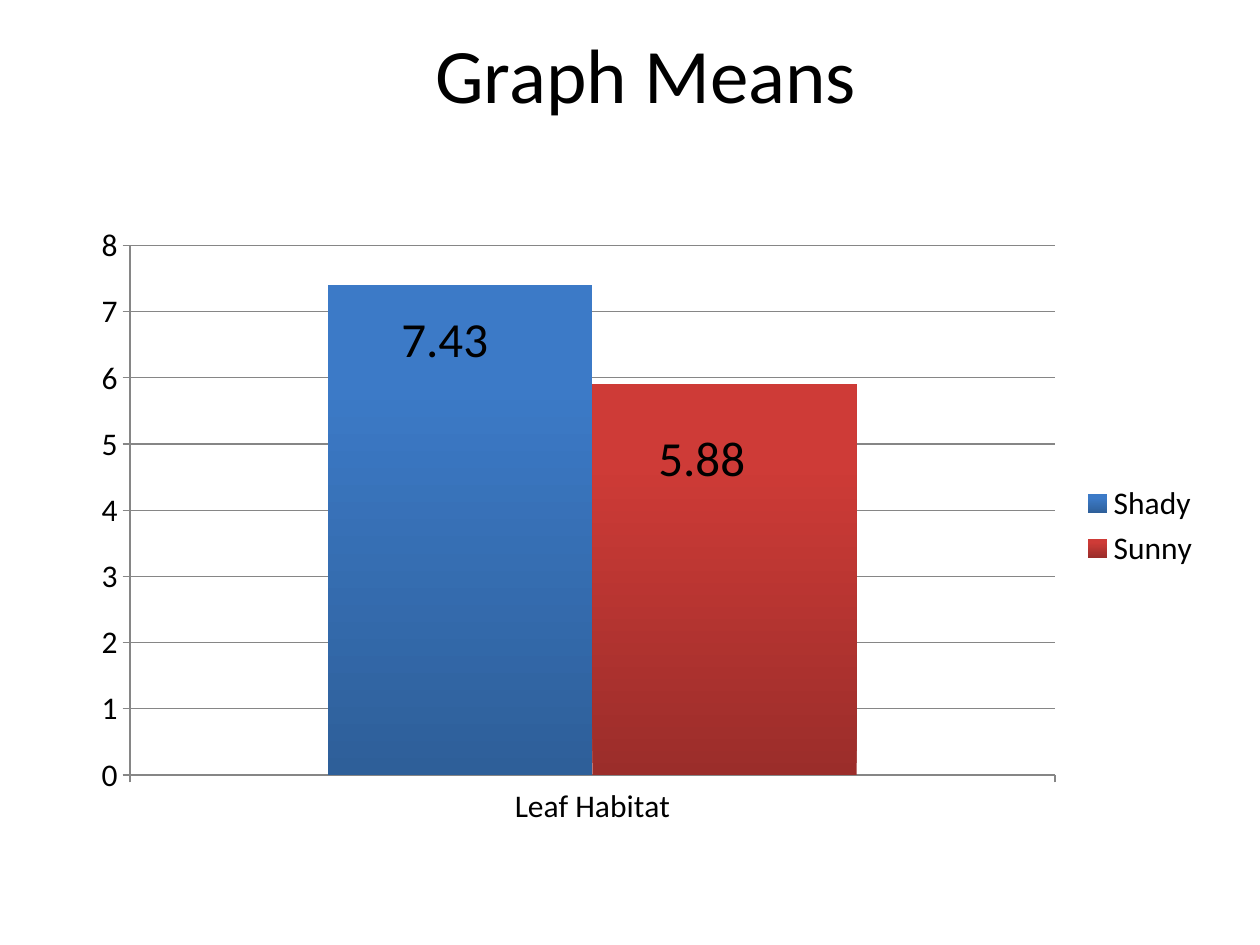
from pptx import Presentation
from pptx.chart.data import CategoryChartData
from pptx.dml.color import RGBColor
from pptx.enum.chart import XL_CHART_TYPE, XL_LEGEND_POSITION, XL_TICK_MARK
from pptx.enum.text import MSO_ANCHOR, PP_ALIGN
from pptx.util import Emu, Pt

COLUMN = XL_CHART_TYPE.COLUMN_CLUSTERED
RIGHT = XL_LEGEND_POSITION.RIGHT
OUTSIDE = XL_TICK_MARK.OUTSIDE
MIDDLE, TOP = MSO_ANCHOR.MIDDLE, MSO_ANCHOR.TOP
CENTER, LEFT = PP_ALIGN.CENTER, PP_ALIGN.LEFT

FONT = "Calibri"
BLACK = "000000"
GREY = "868686"
# name, mean, bottom colour, top colour
HABITATS = [
    ("Shady", 7.4, "2E5F99", "3C7AC7"),
    ("Sunny", 5.9, "9B2D2A", "CE3B37"),
]
# text, offset from the chart's corner
MEAN_LABELS = [("7.43", 310, 88), ("5.88", 567, 207)]


def px(n):
    return Emu(n * 914400 // 126)


def rgb(value):
    return RGBColor.from_string(value)


def style_font(font, size, color=BLACK):
    font.name, font.size = FONT, Pt(size)
    font.color.rgb = rgb(color)


def add_text(slide, text, box, size, align=LEFT, anchor=TOP, wrap=False):
    tf = slide.shapes.add_textbox(*map(px, box)).text_frame
    tf.word_wrap, tf.vertical_anchor = wrap, anchor
    p = tf.paragraphs[0]
    p.alignment = align
    r = p.add_run()
    r.text = text
    style_font(r.font, size)


def style_line(line):
    line.color.rgb = rgb(GREY)
    line.width = Pt(0.75)


def style_axis(axis):
    axis.major_tick_mark = OUTSIDE
    style_line(axis.format.line)


def add_means_chart(slide, box):
    data = CategoryChartData(number_format="General")
    data.categories = ["Leaf Habitat"]
    for name, mean, _, _ in HABITATS:
        data.add_series(name, [mean])
    chart = slide.shapes.add_chart(COLUMN, *map(px, box), data).chart
    style_font(chart.font, 18)
    chart.has_title = False
    chart.has_legend = True
    chart.legend.position = RIGHT
    chart.legend.include_in_layout = False

    style_axis(chart.category_axis)
    values = chart.value_axis
    style_axis(values)
    values.minimum_scale, values.maximum_scale, values.major_unit = 0, 8, 1
    values.has_major_gridlines = True
    style_line(values.major_gridlines.format.line)

    plot = chart.plots[0]
    plot.gap_width, plot.overlap, plot.vary_by_categories = 150, 0, False
    for series, (_, _, bottom, top) in zip(plot.series, HABITATS):
        series.invert_if_negative = False
        fill = series.format.fill
        fill.gradient()
        fill.gradient_angle = 90
        for stop, color, position in zip(fill.gradient_stops, (bottom, top), (0, 0.8)):
            stop.color.rgb = rgb(color)
            stop.position = position


def add_mean_labels(slide, chart_box):
    left, top = chart_box[:2]
    for text, dx, dy in MEAN_LABELS:
        add_text(slide, text, (left + dx, top + dy, 113, 72), 28)


def main():
    prs = Presentation()
    prs.slide_width, prs.slide_height = px(1260), px(945)
    slide = prs.slides.add_slide(prs.slide_layouts[6])
    chart_box = (79, 214, 1134, 624)
    add_text(slide, "Graph Means", (79, 0, 1134, 146), 44, CENTER, MIDDLE, wrap=True)
    add_means_chart(slide, chart_box)
    add_mean_labels(slide, chart_box)
    prs.save("out.pptx")


if __name__ == "__main__":
    main()
